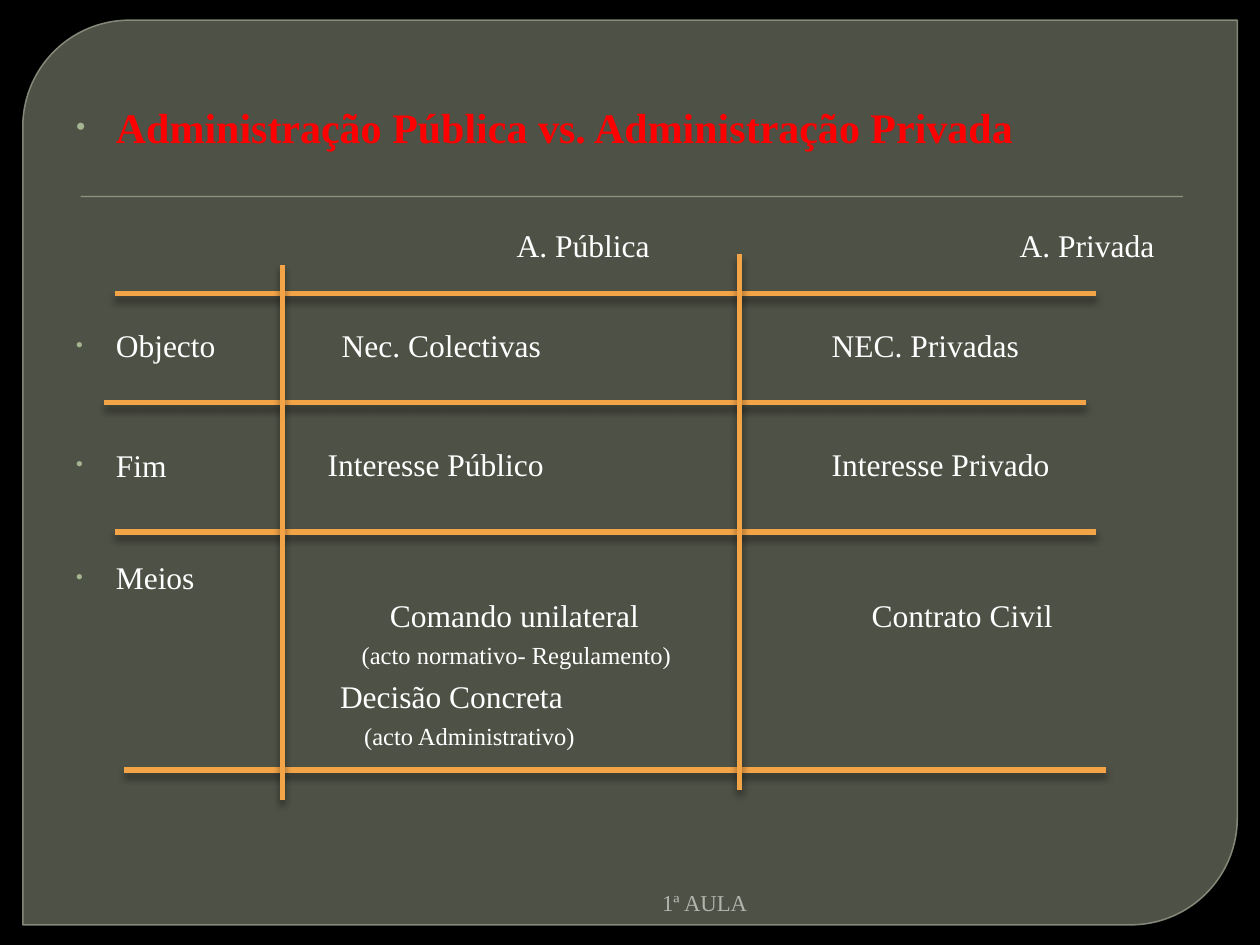
from lxml.etree import SubElement
from pptx import Presentation
from pptx.dml.color import RGBColor
from pptx.enum.shapes import MSO_CONNECTOR as Connector, MSO_SHAPE as Shape
from pptx.enum.text import MSO_ANCHOR as Anchor, MSO_AUTO_SIZE as AutoSize, PP_ALIGN as Align
from pptx.oxml.ns import qn
from pptx.util import Pt

COLORS = {
    "background": "000000",
    "panel": "787D6B",
    "border": "8F9483",
    "accent": "A5B592",
    "grid": "F3A447",
    "heading": "FF0000",
    "text": "FFFFFF",
    "footer": "B1B4AB",
    "shadow": "000000",
}
FONT = "Times New Roman"
HANGING = 23


def color(name):
    return RGBColor.from_string(COLORS[name])


def add_node(parent, tag, **attributes):
    return SubElement(parent, qn(tag), {key: str(value) for key, value in attributes.items()})


def set_alpha(fill, percent):
    node = next(fill.iter(qn("a:srgbClr")))
    add_node(node, "a:alpha", val=percent * 1000)


def add_shadow(shape, blur, distance, percent):
    effects = add_node(shape.element.spPr, "a:effectLst")
    shadow = add_node(effects, "a:outerShdw", blurRad=Pt(blur), dist=Pt(distance),
                      dir=5400000, algn="ctr", rotWithShape=0)
    tint = add_node(shadow, "a:srgbClr", val=COLORS["shadow"])
    add_node(tint, "a:alpha", val=percent * 1000)


def write(paragraph, text, size=18, ink="text", bold=False, align=Align.LEFT,
          before=0, bullet=False):
    paragraph.alignment = align
    paragraph.space_before = Pt(before)
    paragraph.space_after = Pt(0)
    if bullet:
        properties = paragraph._p.get_or_add_pPr()
        properties.set("marL", str(Pt(HANGING)))
        properties.set("indent", str(Pt(-HANGING)))
        add_node(add_node(properties, "a:buClr"), "a:srgbClr", val=COLORS["accent"])
        add_node(properties, "a:buSzPct", val=70000)
        add_node(properties, "a:buFont", typeface=FONT)
        add_node(properties, "a:buChar", char="•")
    run = paragraph.add_run()
    run.text = text
    run.font.name = FONT
    run.font.size = Pt(size)
    run.font.bold = bold
    run.font.color.rgb = color(ink)


class SlideBuilder:
    def __init__(self, slide):
        self.slide = slide
        self.shapes = slide.shapes
        slide.background.fill.solid()
        slide.background.fill.fore_color.rgb = color("background")

    def panel(self, left, top, width, height):
        shape = self.shapes.add_shape(Shape.ROUND_2_DIAG_RECTANGLE,
                                      Pt(left), Pt(top), Pt(width), Pt(height))
        shape.adjustments[0] = 0.118
        shape.adjustments[1] = 0
        shape.shadow.inherit = False
        shape.fill.solid()
        shape.fill.fore_color.rgb = color("panel")
        set_alpha(shape.element.spPr.find(qn("a:solidFill")), 65)
        shape.line.color.rgb = color("border")
        shape.line.width = Pt(0.87)
        set_alpha(shape.element.spPr.find(qn("a:ln")), 88)

    def rule(self, left, top, width, height):
        shape = self.shapes.add_shape(Shape.RECTANGLE, Pt(left), Pt(top), Pt(width), Pt(height))
        shape.fill.solid()
        shape.fill.fore_color.rgb = color("border")
        shape.line.fill.background()
        add_shadow(shape, blur=1, distance=1, percent=75)

    def grid_line(self, left, top, right, bottom):
        line = self.shapes.add_connector(Connector.STRAIGHT,
                                         Pt(left), Pt(top), Pt(right), Pt(bottom))
        line.line.color.rgb = color("grid")
        line.line.width = Pt(3)
        add_shadow(line, blur=4, distance=3, percent=43)

    def fill_frame(self, shape, paragraphs, anchor=Anchor.TOP):
        frame = shape.text_frame
        frame.word_wrap = True
        frame.auto_size = AutoSize.NONE
        frame.vertical_anchor = anchor
        for index, (text, style) in enumerate(paragraphs):
            paragraph = frame.add_paragraph() if index else frame.paragraphs[0]
            write(paragraph, text, bullet=True, **style)

    def placeholder(self, index, left, top, width, height, paragraphs):
        shape = self.slide.placeholders[index]
        shape.left, shape.top, shape.width, shape.height = map(Pt, (left, top, width, height))
        self.shapes.element.append(shape.element)
        self.fill_frame(shape, paragraphs)

    def text(self, left, top, width, height, text, **style):
        shape = self.shapes.add_textbox(Pt(left), Pt(top), Pt(width), Pt(height))
        shape.text_frame.word_wrap = True
        write(shape.text_frame.paragraphs[0], text, **style)


def main():
    presentation = Presentation()
    presentation.slide_width, presentation.slide_height = Pt(720), Pt(540)
    builder = SlideBuilder(presentation.slides.add_slide(presentation.slide_layouts[1]))

    builder.panel(13, 11.5, 694, 517)
    builder.rule(46, 112, 630, 0.72)
    builder.placeholder(0, 36, 54.2, 648, 42, [
        ("Administração Pública vs. Administração Privada",
         dict(size=24, ink="heading", bold=True)),
    ])
    builder.placeholder(1, 36, 182.7, 120, 180, [
        ("Objecto", {}),
        ("Fim", dict(before=46.7)),
        ("Meios", dict(before=42.8)),
    ])

    public_width, private_width = 220, 140
    cells = [
        (288.2, 125.6, public_width, "A. Pública", 18),
        (575.6, 125.6, private_width, "A. Privada", 18),
        (188.2, 182.7, public_width, "Nec. Colectivas", 18),
        (468.2, 182.7, private_width, "NEC. Privadas", 18),
        (180.2, 250.7, public_width, "Interesse Público", 18),
        (468.2, 250.7, private_width, "Interesse Privado", 18),
        (215.7, 337, public_width, "Comando unilateral", 18),
        (491, 337, private_width, "Contrato Civil", 18),
        (199.6, 362.3, public_width, "(acto normativo- Regulamento)", 14),
        (187.2, 383.3, public_width, "Decisão Concreta", 18),
        (201, 408.6, public_width, "(acto Administrativo)", 14),
    ]
    for left, top, width, text, size in cells:
        builder.text(left, top, width, 28, text, size=size)

    for left, top in ((65.5, 167.8), (59.5, 230.2), (65.5, 304), (71, 440)):
        builder.grid_line(left, top, left + 561, top)
    for left, top in ((422.6, 145.4), (161.3, 151.2)):
        builder.grid_line(left, top, left, top + 306)

    builder.text(102, 504.5, 332, 21.6, "1ª AULA", size=13, ink="footer", align=Align.RIGHT)
    presentation.save("out.pptx")


if __name__ == "__main__":
    main()
